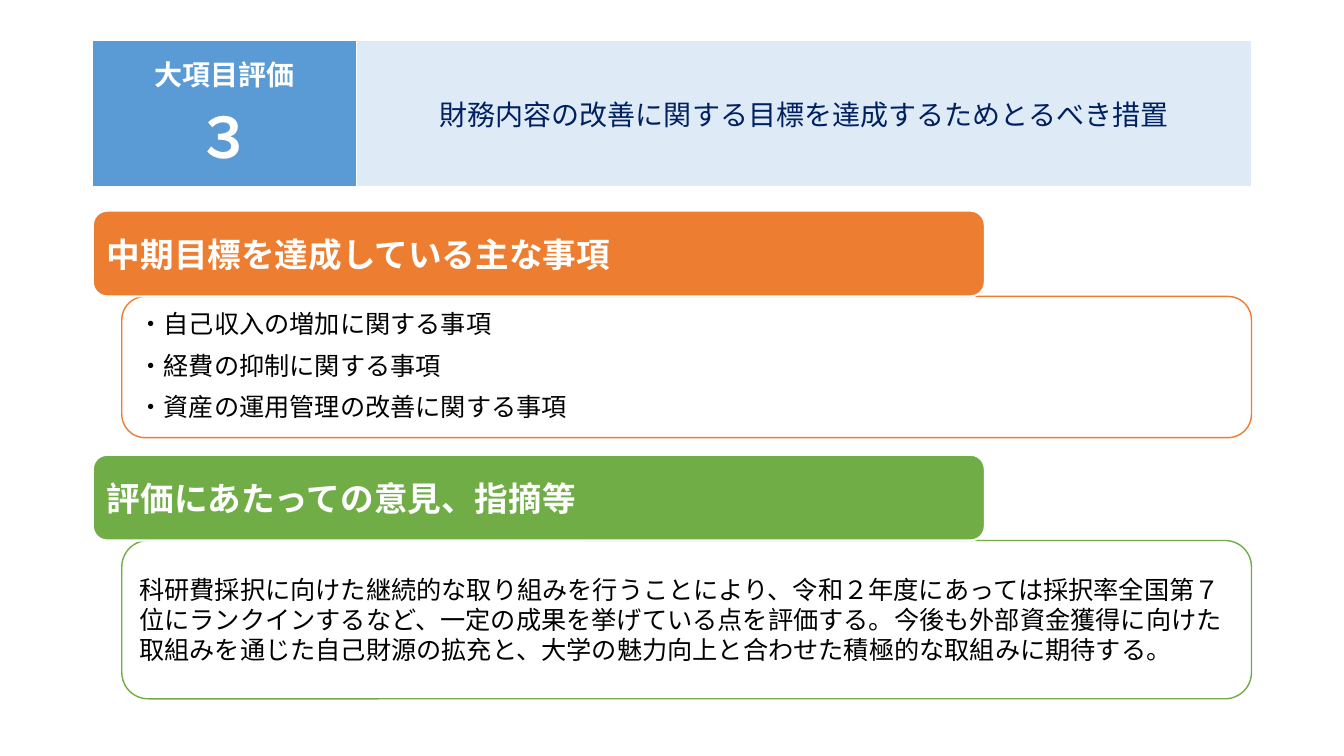
from dataclasses import dataclass

from lxml.etree import SubElement
from pptx import Presentation
from pptx.dml.color import RGBColor
from pptx.enum.shapes import MSO_SHAPE as Shape
from pptx.enum.text import MSO_ANCHOR as Anchor, PP_ALIGN as Align
from pptx.oxml.ns import qn
from pptx.util import Cm, Pt

WHITE = RGBColor(0xFF, 0xFF, 0xFF)
BLACK = RGBColor(0x00, 0x00, 0x00)
NAVY = RGBColor(0x00, 0x20, 0x60)
BLUE = RGBColor(0x5B, 0x9B, 0xD5)
PALE_BLUE = RGBColor(0xDE, 0xEB, 0xF7)
ORANGE = RGBColor(0xED, 0x7D, 0x31)
GREEN = RGBColor(0x70, 0xAD, 0x47)

LATIN_FONT = "Calibri"
CJK_FONT = "Noto Sans CJK JP"

LEFT = 2.34
BODY_LEFT = 3.07
TITLE_WIDTH, TITLE_HEIGHT = 22.48, 2.16
BODY_WIDTH = 28.47


@dataclass
class Section:
    top: float
    body_height: float
    color: RGBColor
    title: str
    body: list[str]
    line_spacing: float = 1.0
    space_before: float = 0


@dataclass
class HeaderCell:
    width: float
    fill: RGBColor
    color: RGBColor
    bold: bool
    lines: list[tuple[str, float]]


SECTIONS = [
    Section(5.31, 3.56, ORANGE, "中期目標を達成している主な事項",
            ["・自己収入の増加に関する事項",
             "・経費の抑制に関する事項",
             "・資産の運用管理の改善に関する事項"],
            line_spacing=0.9, space_before=10),
    Section(11.46, 3.99, GREEN, "評価にあたっての意見、指摘等",
            ["科研費採択に向けた継続的な取り組みを行うことにより、"
             "令和２年度にあっては採択率全国第７位にランクインするなど、"
             "一定の成果を挙げている点を評価する。"
             "今後も外部資金獲得に向けた取組みを通じた自己財源の拡充と、"
             "大学の魅力向上と合わせた積極的な取組みに期待する。"]),
]

HEADER = [
    HeaderCell(6.65, BLUE, WHITE, True, [("大項目評価", 20), ("３", 40)]),
    HeaderCell(22.56, PALE_BLUE, NAVY, False,
               [("財務内容の改善に関する目標を達成するためとるべき措置", 20)]),
]


def add_text(tf, lines: list[tuple[str, float]], *, color: RGBColor,
             bold: bool = False, font: str = CJK_FONT, align=Align.LEFT,
             line_spacing: float = 1.0, space_before: float = 0) -> None:
    for i, (text, size) in enumerate(lines):
        p = tf.add_paragraph() if i else tf.paragraphs[0]
        p.alignment = align
        p.line_spacing = line_spacing
        p.space_before = Pt(space_before)
        r = p.add_run()
        r.text = text
        r.font.name = font
        r.font.size = Pt(size)
        r.font.bold = bold
        r.font.color.rgb = color
        if font == CJK_FONT:
            SubElement(r.font._element, qn("a:ea"), typeface=font)


def add_box(s, left: float, top: float, width: float, height: float, *,
            fill: RGBColor, line: RGBColor, line_width: float):
    sp = s.shapes.add_shape(Shape.ROUNDED_RECTANGLE, Cm(left), Cm(top),
                            Cm(width), Cm(height))
    sp.shadow.inherit = False
    sp.fill.solid()
    sp.fill.fore_color.rgb = fill
    sp.line.color.rgb = line
    sp.line.width = Pt(line_width)
    tf = sp.text_frame
    tf.word_wrap = True
    tf.vertical_anchor = Anchor.MIDDLE
    return tf


def add_section(s, section: Section) -> None:
    tf = add_box(s, BODY_LEFT, section.top + TITLE_HEIGHT, BODY_WIDTH,
                 section.body_height, fill=WHITE, line=section.color,
                 line_width=1)
    add_text(tf, [(text, 18) for text in section.body], color=BLACK,
             line_spacing=section.line_spacing,
             space_before=section.space_before)
    tf = add_box(s, LEFT, section.top, TITLE_WIDTH, TITLE_HEIGHT,
                 fill=section.color, line=WHITE, line_width=1.5)
    add_text(tf, [(section.title, 24)], color=WHITE, bold=True)


def add_header(s, cells: list[HeaderCell]) -> None:
    table = s.shapes.add_table(1, len(cells), Cm(LEFT), Cm(1.02),
                               Cm(sum(c.width for c in cells)), Cm(3.68)).table
    for i, item in enumerate(cells):
        table.columns[i].width = Cm(item.width)
        cell = table.cell(0, i)
        cell.fill.solid()
        cell.fill.fore_color.rgb = item.fill
        cell.vertical_anchor = Anchor.MIDDLE
        cell.margin_left = cell.margin_right = Cm(0.1)
        cell.margin_top = cell.margin_bottom = Cm(0)
        add_text(cell.text_frame, item.lines, color=item.color, bold=item.bold,
                 font=LATIN_FONT, align=Align.CENTER)


def main() -> None:
    prs = Presentation()
    prs.slide_width, prs.slide_height = Cm(33.87), Cm(19.05)
    s = prs.slides.add_slide(prs.slide_layouts[6])
    add_header(s, HEADER)
    for section in SECTIONS:
        add_section(s, section)
    prs.save("out.pptx")


if __name__ == "__main__":
    main()
